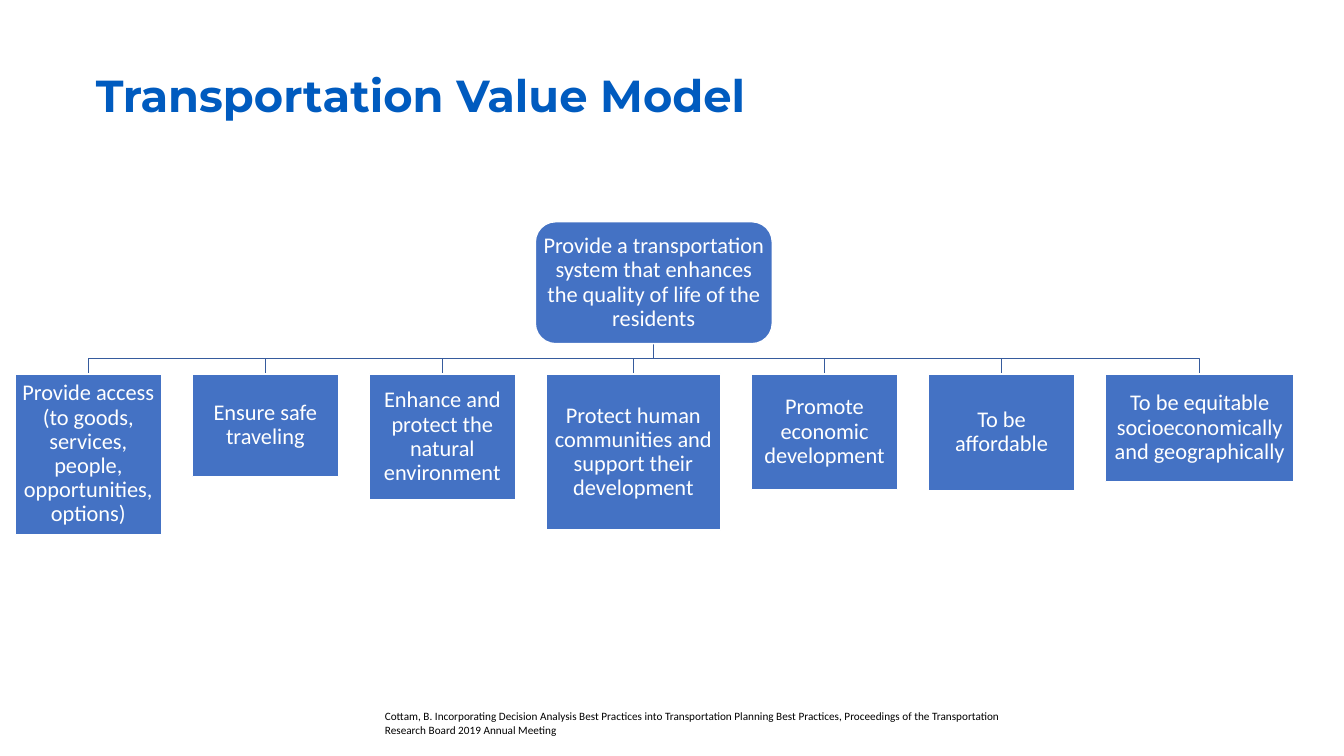
from dataclasses import dataclass

from lxml import etree
from pptx import Presentation
from pptx.dml.color import RGBColor
from pptx.enum.shapes import MSO_SHAPE
from pptx.enum.text import MSO_ANCHOR, PP_ALIGN
from pptx.oxml.ns import qn
from pptx.util import Inches, Pt

RECTANGLE = MSO_SHAPE.RECTANGLE
ROUNDED = MSO_SHAPE.ROUNDED_RECTANGLE
MIDDLE = MSO_ANCHOR.MIDDLE
LEFT, CENTER = PP_ALIGN.LEFT, PP_ALIGN.CENTER

SLIDE_WIDTH = Inches(13.333)
SLIDE_HEIGHT = Inches(7.5)

BOX_FILL = "4472C4"
BOX_LINE = "FFFFFF"
BRANCH_LINE = "365B9D"
TITLE_BLUE = "005BBF"
WHITE, BLACK = "FFFFFF", "000000"

# Horizontal and vertical lengths are percentages of the slide's size.
ROW_LEFT, ROW_TOP, ROW_GAP = 1.13, 49.47, 2.29
NARROW = 10.88


@dataclass(frozen=True)
class Objective:
    text: str
    height: float
    width: float = NARROW


@dataclass(frozen=True)
class Area:
    left: float
    top: float
    width: float
    height: float

    @property
    def center(self) -> float:
        return self.left + self.width / 2

    @property
    def bottom(self) -> float:
        return self.top + self.height

    def to_emu(self) -> tuple[int, int, int, int]:
        return (across(self.left), down(self.top),
                across(self.width), down(self.height))


GOAL = "Provide a transportation system that enhances the quality of life of the residents"
GOAL_AREA = Area(39.83, 29.33, 17.63, 16.13)
OBJECTIVES = [
    Objective("Provide access (to goods, services, people, opportunities, options)", 21.2),
    Objective("Ensure safe traveling", 13.6),
    Objective("Enhance and protect the natural environment", 16.67),
    Objective("Protect human communities and support their development", 20.67, 12.98),
    Objective("Promote economic development", 15.33),
    Objective("To be affordable", 15.47),
    Objective("To be equitable socioeconomically and geographically", 14.27, 14.03),
]
TITLE_AREA = Area(6.38, 6.8, 67.58, 12.4)
CITATION_AREA = Area(27.9, 93.2, 48.15, 4.93)
CITATION = ("Cottam, B. Incorporating Decision Analysis Best Practices into "
            "Transportation Planning Best Practices, Proceedings of the "
            "Transportation Research Board 2019 Annual Meeting")


def across(percent: float) -> int:
    return round(SLIDE_WIDTH * percent / 100)


def down(percent: float) -> int:
    return round(SLIDE_HEIGHT * percent / 100)


def color(hex_string: str) -> RGBColor:
    return RGBColor.from_string(hex_string)


def write(shape, text: str, font_name: str, size: float, hex_string: str,
          alignment=LEFT, bold: bool = False, line_spacing: float = 1.0) -> None:
    shape.text_frame.word_wrap = True
    shape.text_frame.text = text
    paragraph = shape.text_frame.paragraphs[0]
    paragraph.alignment = alignment
    paragraph.line_spacing = line_spacing
    font = paragraph.font
    font.name, font.size, font.bold = font_name, Pt(size), bold
    font.color.rgb = color(hex_string)


def add_box(slide, preset, area: Area, text: str) -> None:
    shape = slide.shapes.add_shape(preset, *area.to_emu())
    shape.shadow.inherit = False
    shape.fill.solid()
    shape.fill.fore_color.rgb = color(BOX_FILL)
    shape.line.color.rgb = color(BOX_LINE)
    shape.line.width = Pt(1)
    frame = shape.text_frame
    frame.margin_left = frame.margin_right = Inches(0.01)
    frame.margin_top = frame.margin_bottom = Inches(0.01)
    frame.vertical_anchor = MIDDLE
    write(shape, text, "Calibri", 16, WHITE, CENTER, line_spacing=0.9)


def add_branch(slide, parent: Area, child: Area) -> None:
    """Draw an elbow from the parent's bottom centre to the child's top centre."""
    start_x, end_x = across(parent.center), across(child.center)
    start_y, end_y = down(parent.bottom), down(child.top)
    middle_y = (start_y + end_y) // 2
    builder = slide.shapes.build_freeform(start_x, start_y)
    builder.add_line_segments(
        [(start_x, middle_y), (end_x, middle_y), (end_x, end_y)], close=False)
    shape = builder.convert_to_shape()
    shape.shadow.inherit = False
    shape.fill.background()
    shape.line.color.rgb = color(BRANCH_LINE)
    shape.line.width = Pt(1)


def objective_areas() -> list[Area]:
    areas = []
    left = ROW_LEFT
    for objective in OBJECTIVES:
        areas.append(Area(left, ROW_TOP, objective.width, objective.height))
        left += objective.width + ROW_GAP
    return areas


def add_title(slide) -> None:
    title = slide.shapes.title
    title.left, title.top, title.width, title.height = TITLE_AREA.to_emu()
    title.text_frame.vertical_anchor = MIDDLE
    body = title.text_frame._txBody.bodyPr
    for autofit in list(body):
        body.remove(autofit)
    etree.SubElement(body, qn("a:noAutofit"))
    write(title, "Transportation Value Model", "Montserrat", 32, TITLE_BLUE,
          bold=True, line_spacing=0.9)


def main() -> None:
    presentation = Presentation()
    presentation.slide_width = SLIDE_WIDTH
    presentation.slide_height = SLIDE_HEIGHT
    slide = presentation.slides.add_slide(presentation.slide_layouts[5])
    add_title(slide)

    areas = objective_areas()
    for area in reversed(areas):
        add_branch(slide, GOAL_AREA, area)
    add_box(slide, ROUNDED, GOAL_AREA, GOAL)
    for objective, area in zip(OBJECTIVES, areas):
        add_box(slide, RECTANGLE, area, objective.text)

    citation = slide.shapes.add_textbox(*CITATION_AREA.to_emu())
    write(citation, CITATION, "Calibri", 8, BLACK)
    presentation.save("out.pptx")


if __name__ == "__main__":
    main()
